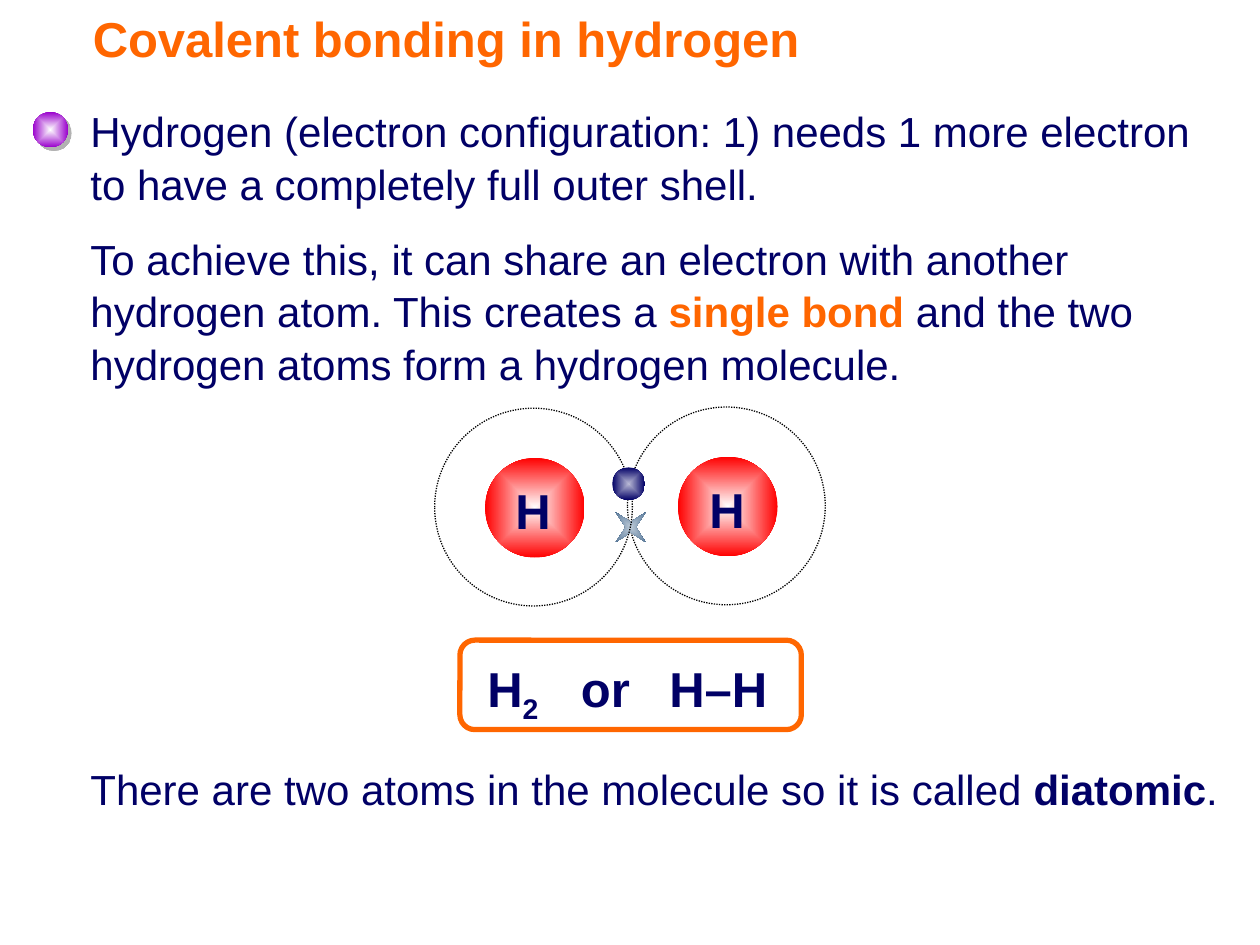
from lxml import etree
from pptx import Presentation
from pptx.dml.color import RGBColor
from pptx.enum.dml import MSO_LINE
from pptx.enum.shapes import MSO_SHAPE
from pptx.enum.text import MSO_ANCHOR, PP_ALIGN
from pptx.oxml import parse_xml
from pptx.util import Pt

OVAL, STAR, ROUND = MSO_SHAPE.OVAL, MSO_SHAPE.STAR_4_POINT, MSO_SHAPE.ROUNDED_RECTANGLE
LEFT, CENTER, MIDDLE = PP_ALIGN.LEFT, PP_ALIGN.CENTER, MSO_ANCHOR.MIDDLE
DOTS = MSO_LINE.ROUND_DOT
NS = "http://schemas.openxmlformats.org/drawingml/2006/main"
NAVY, ORANGE, WHITE, RED = "010066", "FF6600", "FFFFFF", "FF0000"
rgb = RGBColor.from_string


def glow(home, kind, left, top, size, inner, outer):
    ball = home.add_shape(kind, Pt(left), Pt(top), Pt(size), Pt(size))
    ball.shadow.inherit = False
    ball.line.fill.background()
    ball.fill.gradient()
    for stop, tint in zip(ball.fill.gradient_stops, (inner, outer)):
        stop.color.rgb = rgb(tint)
    lin = ball._element.spPr.find(f".//{{{NS}}}lin")
    lin.getparent().replace(lin, parse_xml(
        f'<a:path xmlns:a="{NS}" path="shape">'
        '<a:fillToRect l="50000" t="50000" r="50000" b="50000"/></a:path>'))
    return ball


def write(home, left, top, width, height, size, runs, bold=False, align=LEFT):
    box = home.add_textbox(Pt(left), Pt(top), Pt(width), Pt(height))
    box.text_frame.word_wrap = True
    para = box.text_frame.paragraphs[0]
    para.alignment = align
    para.line_spacing = 1.05
    for text, strong, tint in runs:
        run = para.add_run()
        run.text = text
        run.font.bold = strong or bold
        run.font.color.rgb = rgb(tint)
    para.font.name = "Arial"
    para.font.size = Pt(size)
    return box


deck = Presentation()
deck.slide_width, deck.slide_height = Pt(720), Pt(540)
slide = deck.slides.add_slide(deck.slide_layouts[5])
shapes = slide.shapes

title = shapes.title
title.left, title.top, title.width, title.height = Pt(0), Pt(0), Pt(513.4), Pt(43.2)
frame = title.text_frame
frame.text = "Covalent bonding in hydrogen"
frame.vertical_anchor = MIDDLE
frame.margin_left = Pt(53)
para = frame.paragraphs[0]
para.alignment = LEFT
para.font.name, para.font.size, para.font.bold = "Arial", Pt(28), True
para.font.color.rgb = rgb(ORANGE)

mark = glow(shapes, OVAL, 18.7, 64, 20.2, WHITE, "9900CC")
cast = mark._element.spPr.find(f"{{{NS}}}effectLst")
shade = etree.SubElement(cast, f"{{{NS}}}outerShdw", dist="35560", dir="2700000",
                         algn="ctr", rotWithShape="0")
etree.SubElement(shade, f"{{{NS}}}srgbClr", val="B2B2B2")

notes = [
    (55.4, 665.3, 64.8, [
        ("Hydrogen (electron configuration: 1) needs 1 more electron "
         "to have a completely full outer shell.", False, NAVY)]),
    (128.2, 675.4, 93.6, [
        ("To achieve this, it can share an electron with another "
         "hydrogen atom. This creates a ", False, NAVY),
        ("single bond", True, ORANGE),
        (" and the two hydrogen atoms form a hydrogen molecule.", False, NAVY)]),
    (431.3, 675.4, 36, [
        ("There are two atoms in the molecule so it is called ", False, NAVY),
        ("diatomic", True, NAVY),
        (".", False, NAVY)]),
]
for top, width, height, runs in notes:
    write(shapes, 44.6, top, width, height, 24, runs)

group = shapes.add_group_shape().shapes
rim = group.add_shape(ROUND, Pt(262.8), Pt(365.8), Pt(195.1), Pt(51.1))
rim.shadow.inherit = False
rim.fill.background()
rim.line.color.rgb = rgb(ORANGE)
rim.line.width = Pt(3)
box = write(group, 258.5, 370.8, 203, 41, 28,
            [("H", True, NAVY), ("2", True, NAVY), ("\tor\tH–H", True, NAVY)])
box.text_frame.margin_left = Pt(20)
para = box.text_frame.paragraphs[0]
para.runs[1].font._element.set("baseline", "-25000")
tabs = etree.Element(f"{{{NS}}}tabLst")
for stop in (53.5, 104):
    etree.SubElement(tabs, f"{{{NS}}}tab", pos=str(Pt(stop)), algn="l")
para._p.get_or_add_pPr().find(f"{{{NS}}}lnSpc").addnext(tabs)

atoms = [
    (358.6, 232.6, 391.7, 268.6, (STAR, 348.5, 289.4, 23.8, "BECBD8", "013366"), 45),
    (248.4, 233.3, 280.8, 269.3, (OVAL, 349.9, 267.1, 18.7, "B9B9D5", NAVY), 0),
]
for left, top, across, down, spot, turn in atoms:
    group = shapes.add_group_shape().shapes
    glow(group, OVAL, left + 28.8, top + 28.4, 56.9, WHITE, RED)
    shell = group.add_shape(OVAL, Pt(left), Pt(top), Pt(113), Pt(113))
    shell.shadow.inherit = False
    shell.fill.background()
    shell.line.color.rgb = rgb("000000")
    shell.line.width = Pt(0.75)
    shell.line.dash_style = DOTS
    pair = glow(group, *spot)
    pair.rotation = turn
    if turn:
        pair.adjustments[0] = 0.125
    write(group, across, down, 47.5, 41, 28, [("H", True, NAVY)], align=CENTER)

deck.save("out.pptx")
